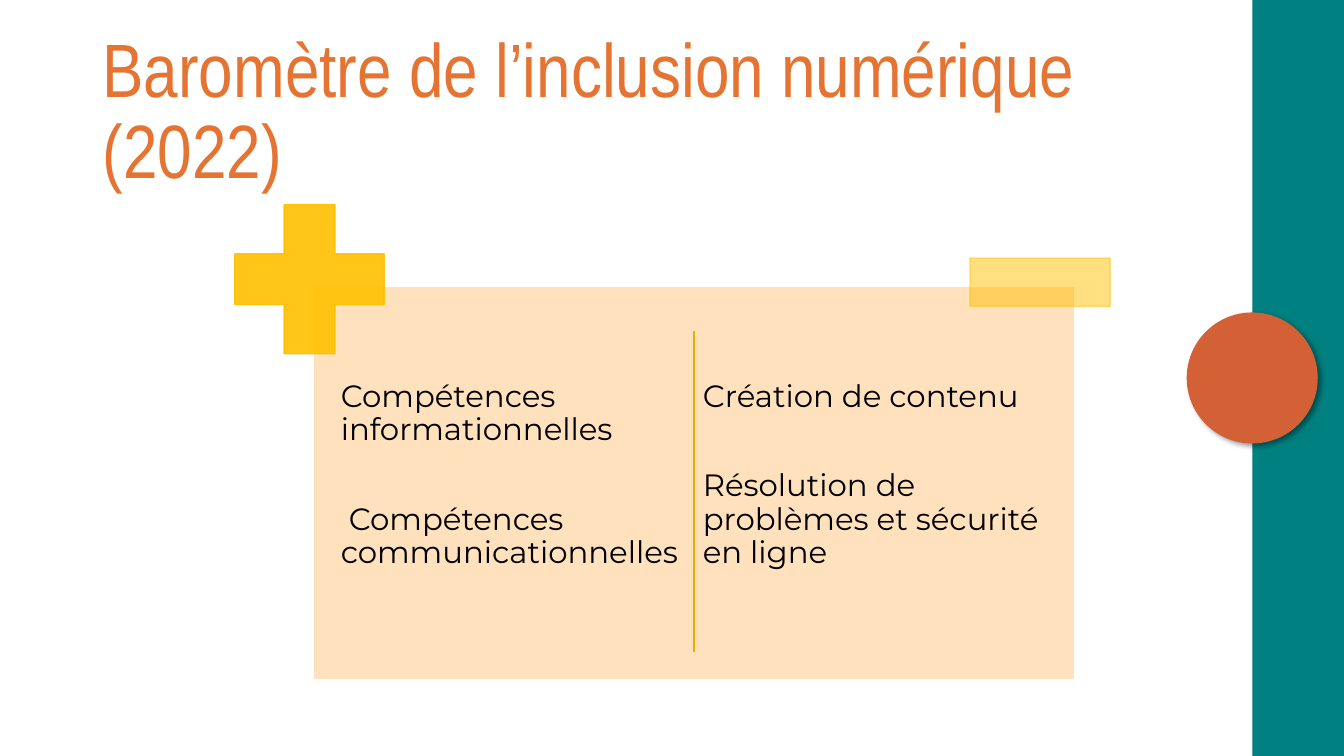
"""Build a slide on strong and weak digital skills."""
from lxml.etree import SubElement
from pptx import Presentation
from pptx.dml.color import RGBColor
from pptx.enum.shapes import MSO_CONNECTOR as Link, MSO_SHAPE as Kind
from pptx.enum.text import MSO_ANCHOR as Anchor
from pptx.oxml.ns import qn
from pptx.util import Inches, Pt

HUES = {"teal": "008080", "rust": "D36135", "title": "E57432", "panel": "FFE2BD",
        "white": "FFFFFF", "gold": "FFC000", "rule": "E7AE00", "black": "000000"}
SKILLS = [["Compétences informationnelles", " Compétences communicationnelles"],
          ["Création de contenu", "Résolution de problèmes et sécurité en ligne"]]


def hue(name):
    return RGBColor.from_string(HUES[name])


def fade(fill, part):
    color = fill._xPr.find(qn("a:solidFill"))[0]
    SubElement(color, qn("a:alpha"), val=str(part * 1000))


def add_form(slide, kind, box, fill, line=None, alpha=None):
    form = slide.shapes.add_shape(kind, *map(Inches, box))
    form.shadow.inherit = False
    form.fill.solid()
    form.fill.fore_color.rgb = hue(fill)
    if line:
        form.line.color.rgb = hue(line)
        form.line.width = Pt(1)
    else:
        form.line.fill.background()
    if alpha:
        fade(form.fill, alpha)
        fade(form.line.fill, alpha)
    return form


def add_shade(form):
    effects = form._element.spPr.find(qn("a:effectLst"))
    shade = SubElement(effects, qn("a:outerShdw"), blurRad=str(Pt(4)), dist=str(Pt(3)),
                       dir="2700000", algn="tl", rotWithShape="0")
    color = SubElement(shade, qn("a:srgbClr"), val=HUES["black"])
    SubElement(color, qn("a:alpha"), val="40000")


def add_text(slide, box, texts, size, font, color, gap=0):
    frame = slide.shapes.add_textbox(*map(Inches, box)).text_frame
    frame.word_wrap = True
    for i, text in enumerate(texts):
        para = frame.paragraphs[0] if i == 0 else frame.add_paragraph()
        para.line_spacing = 0.9
        if i:
            para.space_before = Pt(gap)
        run = para.add_run()
        run.text = text
        run.font.size = Pt(size)
        run.font.name = font
        run.font.color.rgb = hue(color)
    return frame


def add_side(slide, x, y, w, h):
    """Place the side band and the disc centred on its left edge."""
    disc = 1.3
    add_shade(add_form(slide, Kind.RECTANGLE, (x, y, w, h), "teal"))
    spot = (x - disc / 2, y + h / 2 - disc / 2, disc, disc)
    add_shade(add_form(slide, Kind.FLOWCHART_CONNECTOR, spot, "rust"))


def add_title(slide, x, y, w, h):
    """Place the slide title."""
    frame = add_text(slide, (x, y, w, h), ["Baromètre de l’inclusion numérique (2022)"],
                     54, "Arial Narrow", "title")
    frame.vertical_anchor = Anchor.MIDDLE


def add_panel(slide, x, y, w, h):
    """Place the panel with its two columns, divider, plus and minus."""
    add_form(slide, Kind.RECTANGLE, (x, y, w, h), "panel", "white")
    for i, texts in enumerate(SKILLS):
        box = (x + 0.22 + i * 3.59, y + 0.43, 3.51, 3.34)
        frame = add_text(slide, box, texts, 22, "Montserrat", "black", 40)
        frame.margin_left = frame.margin_right = frame.margin_bottom = Inches(0.05)
        frame.margin_top = Inches(0.51)
    plus = add_form(slide, Kind.CROSS, (x - 0.78, y - 0.81, 1.48, 1.48), "gold", "gold", 90)
    plus.adjustments[0] = 0.33
    add_form(slide, Kind.RECTANGLE, (x + w - 1.04, y - 0.28, 1.39, 0.48), "gold", "gold", 50)
    mid = x + w / 2
    ends = (mid, y + 0.44, mid, y + 3.63)
    rule = slide.shapes.add_connector(Link.STRAIGHT, *map(Inches, ends))
    rule.line.color.rgb = hue("rule")
    rule.line.width = Pt(1)
    SubElement(rule._element.spPr, qn("a:effectLst"))


def main():
    deck = Presentation()
    deck.slide_width, deck.slide_height = Inches(13.33), Inches(7.5)
    slide = deck.slides.add_slide(deck.slide_layouts[6])
    add_side(slide, 12.42, 0, 0.91, 7.5)
    add_title(slide, 0.92, 0.4, 11.5, 1.45)
    add_panel(slide, 3.11, 2.84, 7.55, 3.9)
    deck.save("out.pptx")


if __name__ == "__main__":
    main()
